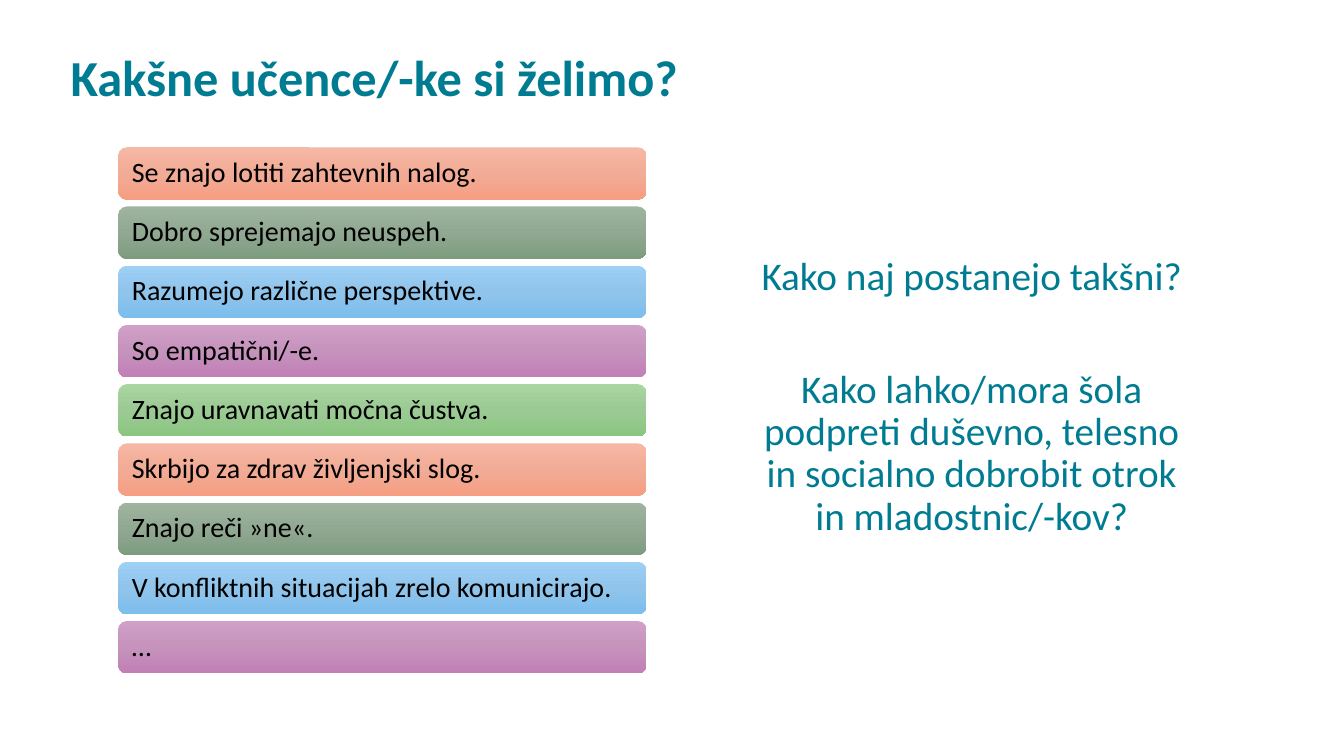
from copy import deepcopy

from lxml.etree import SubElement
from pptx import Presentation
from pptx.dml.color import RGBColor
from pptx.enum.shapes import MSO_SHAPE
from pptx.enum.text import MSO_ANCHOR, MSO_AUTO_SIZE, PP_ALIGN
from pptx.oxml.ns import qn
from pptx.util import Pt

COLORS = {
    "teal": "007C92",
    "black": "000000",
    "coral": ("F5B8A5", "F2AB96", "F59E82"),
    "sage": ("9EB49F", "91A892", "7D9C7E"),
    "blue": ("9ECFF5", "90C4EB", "7CBEED"),
    "mauve": ("D0A0C8", "C693BD", "C17FB6"),
    "green": ("A8D5A0", "9CCA94", "8AC680"),
}
BAR_COLORS = ["coral", "sage", "blue", "mauve", "green"]

TITLE = "Kakšne učence/-ke si želimo?"
QUALITIES = [
    "Se znajo lotiti zahtevnih nalog.",
    "Dobro sprejemajo neuspeh.",
    "Razumejo različne perspektive.",
    "So empatični/-e.",
    "Znajo uravnavati močna čustva.",
    "Skrbijo za zdrav življenjski slog.",
    "Znajo reči »ne«.",
    "V konfliktnih situacijah zrelo komunicirajo.",
    "…",
]
QUESTIONS = [
    "Kako naj postanejo takšni?",
    "Kako lahko/mora šola podpreti duševno, telesno in socialno dobrobit otrok in mladostnic/-kov?",
]


class SlideBuilder:
    font_name = "Calibri"
    line_spacing = 0.9

    def __init__(self, slide):
        self.slide = slide

    def place(self, shape, left, top, width, height):
        shape.left, shape.top = Pt(left), Pt(top)
        shape.width, shape.height = Pt(width), Pt(height)

    def add_text(self, paragraph, text, size, color, alignment=PP_ALIGN.LEFT, bold=False, before=0):
        paragraph.alignment = alignment
        paragraph.line_spacing = self.line_spacing
        paragraph.space_before = Pt(before)
        run = paragraph.add_run()
        run.text = text
        run.font.name = self.font_name
        run.font.size = Pt(size)
        run.font.bold = bold
        run.font.color.rgb = RGBColor.from_string(COLORS[color])

    def title(self, text, box):
        shape = self.slide.shapes.title
        self.place(shape, *box)
        frame = shape.text_frame
        frame.auto_size = MSO_AUTO_SIZE.NONE
        frame.vertical_anchor = MSO_ANCHOR.MIDDLE
        self.add_text(frame.paragraphs[0], text, 36, "teal", bold=True)

    def body(self, texts, box, gap):
        shape = self.slide.placeholders[1]
        self.place(shape, *box)
        frame = shape.text_frame
        frame.auto_size = MSO_AUTO_SIZE.NONE
        for index, text in enumerate(texts):
            paragraph = frame.add_paragraph() if index else frame.paragraphs[0]
            properties = paragraph._p.get_or_add_pPr()
            properties.set("marL", "0")
            properties.set("indent", "0")
            SubElement(properties, qn("a:buNone"))
            self.add_text(paragraph, text, 28, "teal", PP_ALIGN.CENTER, before=gap if index else 0)

    def gradient(self, shape, shades):
        fill = shape.fill
        fill.gradient()
        fill.gradient_angle = 270
        # A third stop halfway down
        first_stop = shape._element.spPr.find(".//" + qn("a:gs"))
        middle_stop = deepcopy(first_stop)
        middle_stop.set("pos", "50000")
        first_stop.addnext(middle_stop)
        for stop, shade in zip(fill.gradient_stops, shades):
            stop.color.rgb = RGBColor.from_string(shade)

    def bar(self, text, color, box):
        shape = self.slide.shapes.add_shape(MSO_SHAPE.ROUNDED_RECTANGLE, *map(Pt, box))
        shape.shadow.inherit = False
        shape.line.fill.background()
        self.gradient(shape, COLORS[color])
        frame = shape.text_frame
        frame.word_wrap = True
        frame.vertical_anchor = MSO_ANCHOR.MIDDLE
        frame.margin_left = frame.margin_right = Pt(8)
        self.add_text(frame.paragraphs[0], text, 20, "black")


def main():
    presentation = Presentation()
    presentation.slide_width, presentation.slide_height = Pt(960), Pt(540)
    builder = SlideBuilder(presentation.slides.add_slide(presentation.slide_layouts[1]))

    # Heading
    builder.title(TITLE, (43.2, 23, 828, 69))

    # Stack of qualities, colours cycling
    bar_top, bar_pitch = 105.2, 42.3
    for index, quality in enumerate(QUALITIES):
        color = BAR_COLORS[index % len(BAR_COLORS)]
        builder.bar(quality, color, (84.4, bar_top + index * bar_pitch, 377.5, 37.4))

    # Questions on the right
    builder.body(QUESTIONS, (535, 180, 318, 227), gap=50)

    presentation.save("out.pptx")


if __name__ == "__main__":
    main()
